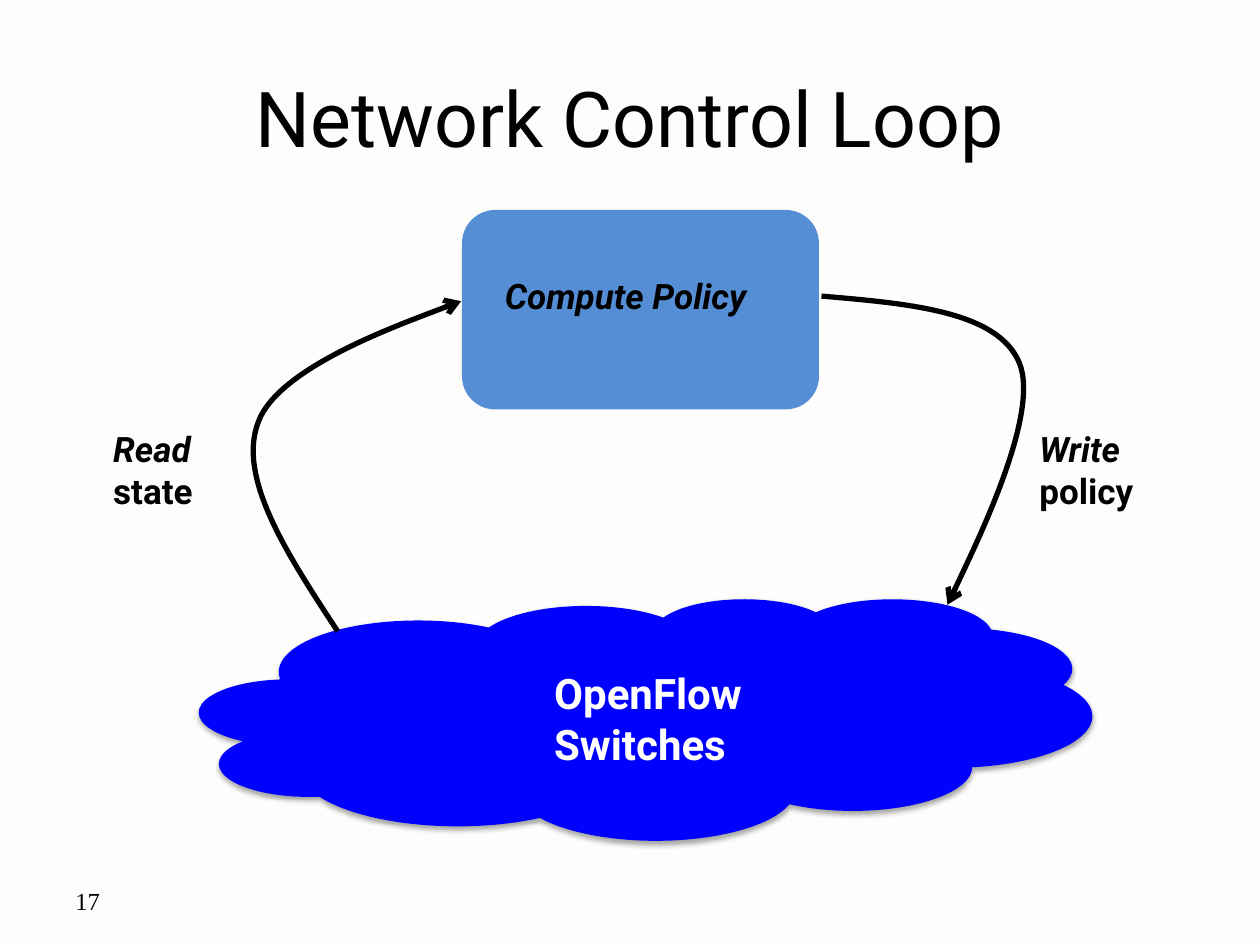
from lxml.etree import SubElement
from pptx import Presentation
from pptx.dml.color import RGBColor
from pptx.enum.shapes import MSO_SHAPE
from pptx.enum.text import MSO_ANCHOR, PP_ALIGN
from pptx.oxml.ns import qn
from pptx.util import Inches, Pt

CELL = Inches(1) // 12  # the slide is a grid of 120 columns by 90 rows


def paint(color_format, value):
    color_format.rgb = RGBColor.from_string(value)


def add_text(page, area, lines, size, color="000000", name="Roboto", bold=True,
             anchor=MSO_ANCHOR.TOP, align=PP_ALIGN.LEFT, wrap=True):
    """Place a text box; lines is a list of (text, italic), area is in grid cells."""
    box = page.shapes.add_textbox(*[int(cells * CELL) for cells in area])
    frame = box.text_frame
    frame.word_wrap = wrap
    frame.vertical_anchor = anchor
    for index, (text, italic) in enumerate(lines):
        para = frame.add_paragraph() if index else frame.paragraphs[0]
        para.text = text
        para.alignment = align
        para.font.name = name
        para.font.size = Pt(size)
        para.font.bold = bold
        para.font.italic = italic
        paint(para.font.color, color)


deck = Presentation()
deck.slide_width, deck.slide_height = 120 * CELL, 90 * CELL
page = deck.slides.add_slide(deck.slide_layouts[6])
page.background.fill.solid()
paint(page.background.fill.fore_color, "FDFDFC")

add_text(page, (6, 3.6, 108, 15), [("Network Control Loop", False)], 44,
         bold=False, anchor=MSO_ANCHOR.MIDDLE, align=PP_ALIGN.CENTER)
add_text(page, (6, 83.4, 28, 4.8), [("17", False)], 14, name="Times New Roman",
         bold=False, anchor=MSO_ANCHOR.MIDDLE)

# Policy box and switch cloud
for kind, area, color in [
    (MSO_SHAPE.ROUNDED_RECTANGLE, (44, 20, 34, 19), "558ED5"),
    (MSO_SHAPE.CLOUD, (19, 57, 85, 23), "0000FF"),
]:
    shape = page.shapes.add_shape(kind, *[cells * CELL for cells in area])
    shape.shadow.inherit = False
    shape.fill.solid()
    paint(shape.fill.fore_color, color)
    shape.line.fill.background()

# The cloud, drawn last, casts a soft shadow straight down
effects = shape._element.spPr.find(qn("a:effectLst"))
shadow = SubElement(effects, qn("a:outerShdw"), blurRad=str(Pt(3.1)),
                    dist=str(Pt(1.8)), dir="5400000", rotWithShape="0")
shade = SubElement(shadow, qn("a:srgbClr"), val="000000")
SubElement(shade, qn("a:alpha"), val="35000")

# Loop arrows: a start, then control, control, end for each curve (1/100 inch)
read_curve = [(268, 501), (228, 440), (188, 379), (205, 335),
              (221, 291), (366, 239), (366, 239)]
write_curve = [(652, 235), (722, 241), (792, 247), (809, 288),
               (826, 329), (752, 480), (752, 480)]
for start, *points in (read_curve, write_curve):
    builder = page.shapes.build_freeform(*start, scale=Inches(0.01))
    builder.add_line_segments(points, close=False)
    arrow = builder.convert_to_shape()
    arrow.shadow.inherit = False
    arrow.fill.background()
    paint(arrow.line.color, "000000")
    arrow.line.width = Pt(3)
    outline = arrow._element.spPr.find(qn("a:ln"))
    SubElement(outline, qn("a:tailEnd"), type="arrow")

    # Turn every three straight segments into one Bezier curve
    track = arrow._element.xpath(".//a:path")[0]
    segments = track.findall(qn("a:lnTo"))
    for first in range(0, len(segments), 3):
        curve = SubElement(track, qn("a:cubicBezTo"))
        for segment in segments[first:first + 3]:
            curve.append(segment[0])
            track.remove(segment)

# Labels
add_text(page, (9.6, 40.1, 11.6, 9.2), [("Read", True), ("state", False)], 20)
add_text(page, (97.8, 40.1, 13.1, 9.2), [("Write", True), ("policy", False)], 20)
add_text(page, (46.9, 25.6, 28.4, 5.3), [("Compute Policy", True)], 20)
add_text(page, (51.6, 63, 22, 10.9), [("OpenFlow", False), ("Switches", False)], 24,
         color="FFFFFF", wrap=False)

deck.save("out.pptx")
